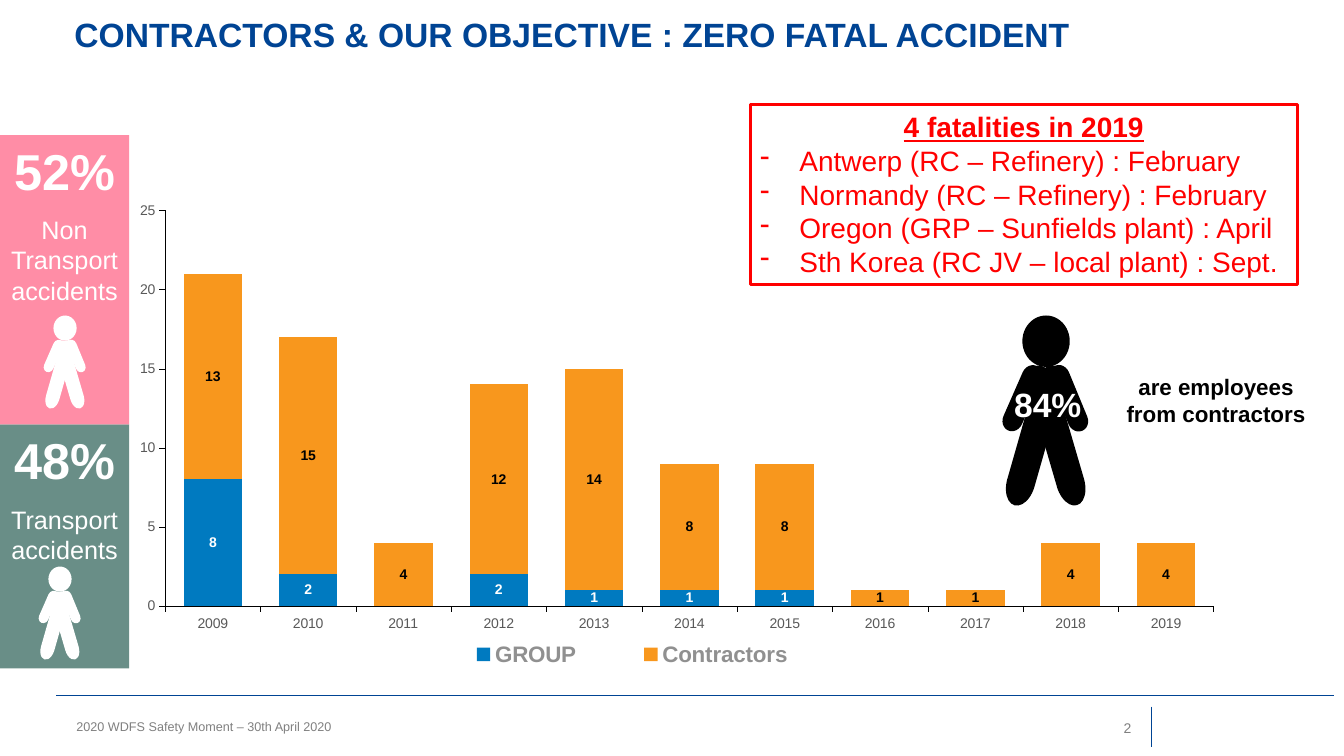
from dataclasses import dataclass
from typing import Optional

from lxml import etree
from pptx import Presentation
from pptx import util as u
from pptx.chart import data as chart_data
from pptx.dml import color
from pptx.enum import chart as ch, shapes, text
from pptx.oxml import ns

BLUE, GREY, WHITE, BLACK, RED = "004494", "808080", "FFFFFF", "000000", "FF0000"
LEFT, CENTER, RIGHT = text.PP_ALIGN.LEFT, text.PP_ALIGN.CENTER, text.PP_ALIGN.RIGHT
TOP, MIDDLE = text.MSO_ANCHOR.TOP, text.MSO_ANCHOR.MIDDLE


@dataclass
class Label:
    wording: str
    box: tuple
    size: float
    color: str
    bold: bool = False
    align: text.PP_ALIGN = LEFT
    anchor: text.MSO_ANCHOR = TOP
    wrap: bool = True


@dataclass
class Share:
    percent: str
    kind: str
    top: float
    height: float
    fill: str


@dataclass
class Person:
    left: float
    top: float
    scale: float
    fill: str


@dataclass
class Limb:
    x: float
    y: float
    width: float
    height: float
    rotation: float


@dataclass
class Staff:
    name: str
    deaths: tuple
    fill: str
    label_color: str


LABELS = [
    Label("2", (10.26, 7.03, 1.06, 0.39), 10, GREY, align=RIGHT, anchor=MIDDLE),
    Label("84%", (9.96, 3.76, 0.88, 0.5), 24, WHITE, True, wrap=False),
    Label("are employees from contractors", (11, 3.65, 2.12, 0.64), 16, BLACK, True, CENTER),
    Label("2020 WDFS Safety Moment – 30th April 2020", (0.66, 7.06, 3.72, 0.3), 9, GREY, anchor=MIDDLE),
    Label("CONTRACTORS & OUR OBJECTIVE : ZERO FATAL ACCIDENT", (0.64, 0, 12.57, 0.67), 24, BLUE, True,
          anchor=MIDDLE),
]
SHARES = [
    Share("48%", "Transport accidents", 4.21, 2.42, "698E87"),
    Share("52%", "Non Transport accidents", 1.34, 2.87, "FF8DA6"),
]
PEOPLE = [
    Person(0.48, 5.62, 0.49, WHITE),
    Person(0.53, 3.13, 0.49, WHITE),
    Person(10.14, 3.13, 1, BLACK),
]
LIMBS = [
    Limb(-0.35, 0.72, 0.7, 0.2, 293.7),
    Limb(0.11, 0.72, 0.7, 0.2, 247.6),
    Limb(-0.6, 1.05, 1.44, 0.28, 285.9),
    Limb(-0.38, 1.05, 1.44, 0.28, 253.7),
]
STAFF = [
    Staff("GROUP", (8, 2, None, 2, 1, 1, 1, None, None, None, None), "007AC0", WHITE),
    Staff("Contractors", (13, 15, 4, 12, 14, 8, 8, 1, 1, 4, 4), "F8971D", BLACK),
]
FATALITIES = [
    "4 fatalities in 2019",
    "Antwerp (RC – Refinery) : February",
    "Normandy (RC – Refinery) : February",
    "Oregon (GRP – Sunfields plant) : April",
    "Sth Korea (RC JV – local plant) : Sept.",
]


def rgb(value: str) -> color.RGBColor:
    return color.RGBColor.from_string(value)


def inches(values) -> list:
    return [u.Inches(value) for value in values]


def style(font, size: float, shade: str, bold: bool = False) -> None:
    font.name, font.size, font.bold = "Arial", u.Pt(size), bold
    font.color.rgb = rgb(shade)


def add_filled(parent, kind, box, fill: Optional[str] = None):
    shape = parent.add_shape(kind, *inches(box))
    shape.shadow.inherit = False
    shape.line.fill.background()
    if fill:
        shape.fill.solid()
        shape.fill.fore_color.rgb = rgb(fill)
    else:
        shape.fill.background()
    return shape


def add_rule(slide, start, end, width: float) -> None:
    rule = slide.shapes.add_connector(shapes.MSO_CONNECTOR.STRAIGHT, *inches(start + end))
    rule.line.color.rgb = rgb(BLUE)
    rule.line.width = u.Pt(width)
    etree.SubElement(rule._element.spPr, ns.qn("a:effectLst"))


def add_label(slide, label: Label) -> None:
    frame = slide.shapes.add_textbox(*inches(label.box)).text_frame
    frame.word_wrap, frame.vertical_anchor = label.wrap, label.anchor
    frame.text = label.wording
    frame.paragraphs[0].alignment = label.align
    style(frame.paragraphs[0].runs[0].font, label.size, label.color, label.bold)


def add_share(slide, share: Share) -> None:
    frame = add_filled(slide.shapes, shapes.MSO_SHAPE.RECTANGLE,
                       (0, share.top, 1.28, share.height), share.fill).text_frame
    frame.word_wrap, frame.vertical_anchor = True, TOP
    frame.text = f"{share.percent}\n{share.kind}"
    percent, kind = frame.paragraphs
    percent.alignment = kind.alignment = CENTER
    kind.space_before = u.Pt(10)
    style(percent.runs[0].font, 36, WHITE, True)
    style(kind.runs[0].font, 18, WHITE)


def add_person(slide, person: Person) -> None:
    parts = slide.shapes.add_group_shape().shapes
    scale = person.scale
    add_filled(parts, shapes.MSO_SHAPE.OVAL,
               (person.left, person.top, 0.47 * scale, 0.51 * scale), person.fill)
    for limb in LIMBS:
        box = (person.left + limb.x * scale, person.top + limb.y * scale,
               limb.width * scale, limb.height * scale)
        add_filled(parts, shapes.MSO_SHAPE.FLOWCHART_TERMINATOR, box, person.fill).rotation = limb.rotation


def add_fatalities(slide) -> None:
    panel = add_filled(slide.shapes, shapes.MSO_SHAPE.RECTANGLE, (7.44, 1.04, 5.43, 1.78))
    panel.line.color.rgb = rgb(RED)
    panel.line.width = u.Pt(2)
    frame = panel.text_frame
    frame.word_wrap, frame.vertical_anchor = True, TOP
    frame.text = "\n".join(FATALITIES)
    heading, *places = frame.paragraphs
    heading.alignment = CENTER
    style(heading.runs[0].font, 20, RED, True)
    heading.runs[0].font.underline = True
    for place in places:
        place.alignment = LEFT
        properties = place._p.get_or_add_pPr()
        properties.set("marL", str(u.Inches(0.39)))
        properties.set("indent", str(-u.Inches(0.39)))
        etree.SubElement(properties, ns.qn("a:buChar"), char="-")
        style(place.runs[0].font, 20, RED)


def set_layout(element, index: int, inner: bool, **bounds: float) -> None:
    layout = element.find(ns.qn("c:layout"))
    if layout is not None:
        element.remove(layout)
    layout = etree.Element(ns.qn("c:layout"))
    element.insert(index, layout)
    manual = etree.SubElement(layout, ns.qn("c:manualLayout"))
    modes = {"layoutTarget": "inner"} if inner else {}
    for tag, value in {**modes, "xMode": "edge", "yMode": "edge", **bounds}.items():
        etree.SubElement(manual, ns.qn(f"c:{tag}"), val=str(value))


def add_accident_chart(slide) -> None:
    data = chart_data.CategoryChartData()
    data.categories = [str(year) for year in range(2009, 2020)]
    for staff in STAFF:
        data.add_series(staff.name, staff.deaths)
    chart = slide.shapes.add_chart(ch.XL_CHART_TYPE.COLUMN_STACKED,
                                   *inches((0.77, 1.03, 11.58, 5.72)), data).chart
    style(chart.font, 10, BLACK)
    chart.has_title = False
    chart.has_legend = True
    chart.legend.position = ch.XL_LEGEND_POSITION.BOTTOM
    chart.legend.include_in_layout = False
    style(chart.legend.font, 16, "909090", True)
    plot = chart.plots[0]
    plot.gap_width, plot.overlap, plot.vary_by_categories = 63, 100, False
    for series, staff in zip(plot.series, STAFF):
        series.format.fill.solid()
        series.format.fill.fore_color.rgb = rgb(staff.fill)
        series.data_labels.show_value = True
        style(series.data_labels.font, 10, staff.label_color, True)
    for axis in (chart.category_axis, chart.value_axis):
        axis.has_major_gridlines = False
        axis.major_tick_mark = ch.XL_TICK_MARK.OUTSIDE
        axis.format.line.color.rgb = rgb(BLACK)
        axis.format.line.width = u.Pt(0.17)
        style(axis.tick_labels.font, 10, "595959")
    scale = chart.value_axis
    scale.minimum_scale, scale.maximum_scale, scale.major_unit = 0, 25, 5
    set_layout(plot._element.getparent(), 0, True, x=0.075, y=0.185, w=0.898, h=0.686)
    set_layout(chart.legend._element, 1, False, x=0.29, y=0.92, w=0.37, h=0.07)


def main() -> None:
    deck = Presentation()
    deck.slide_width, deck.slide_height = inches((13.33, 7.5))
    slide = deck.slides.add_slide(deck.slide_layouts[6])
    add_rule(slide, (0.56, 6.9), (13.23, 6.9), 0.75)
    add_rule(slide, (11.42, 7.01), (11.42, 7.41), 0.5)
    add_accident_chart(slide)
    add_fatalities(slide)
    for share in SHARES:
        add_share(slide, share)
    for person in PEOPLE:
        add_person(slide, person)
    for label in LABELS:
        add_label(slide, label)
    deck.save("out.pptx")


if __name__ == "__main__":
    main()
